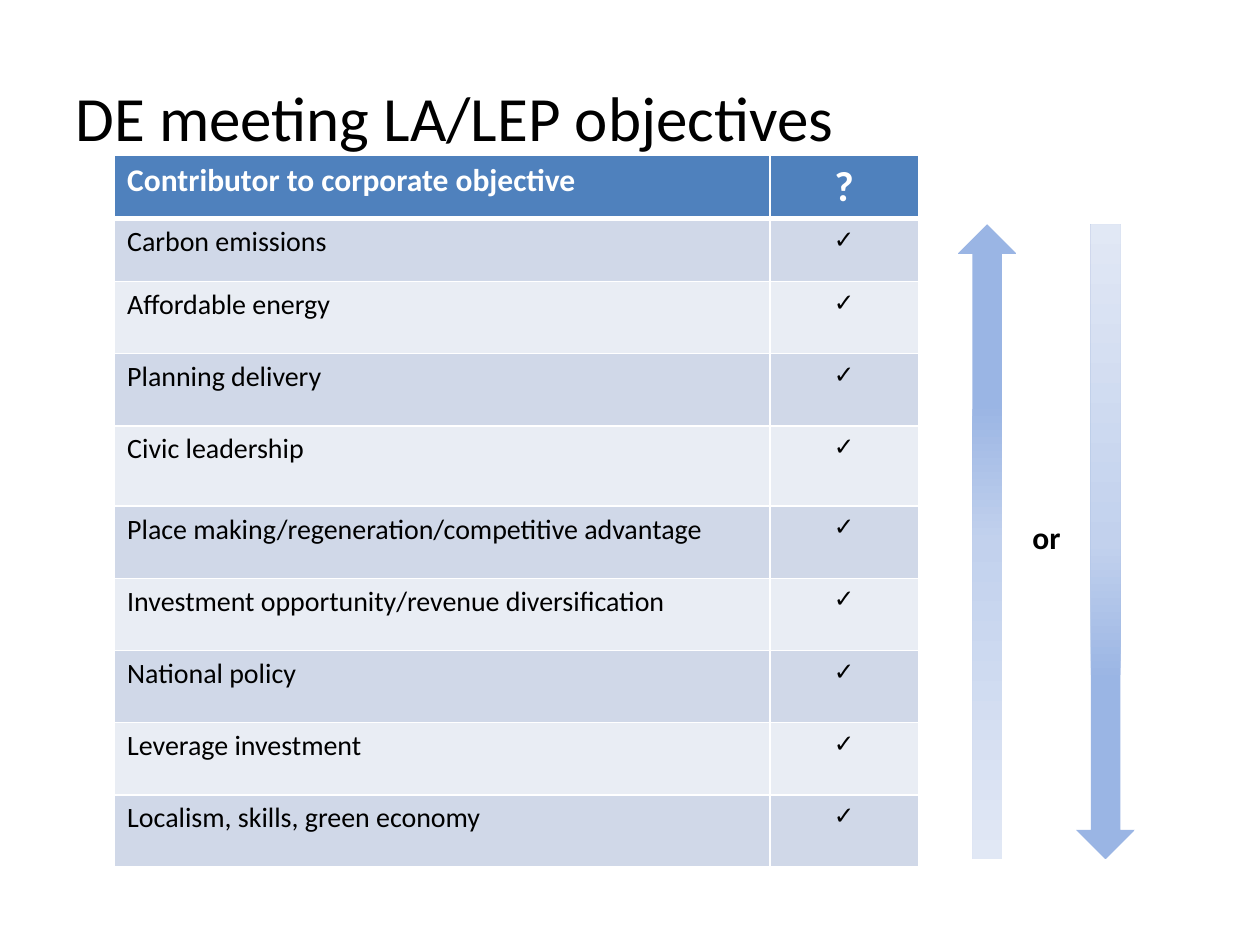
from lxml import etree
from pptx import Presentation
from pptx.dml.color import RGBColor
from pptx.enum.shapes import MSO_SHAPE
from pptx.enum.text import MSO_ANCHOR, PP_ALIGN
from pptx.oxml.ns import qn
from pptx.util import Pt

UP_ARROW = MSO_SHAPE.UP_ARROW
MIDDLE, TOP = MSO_ANCHOR.MIDDLE, MSO_ANCHOR.TOP
LEFT, CENTER = PP_ALIGN.LEFT, PP_ALIGN.CENTER

FONT = "Calibri"
COLORS = {
    "text": "000000",
    "white": "FFFFFF",
    "header": "4F81BD",
    "odd": "D0D8E8",
    "even": "E9EDF4",
}
ARROW_STOPS = [(28, "9AB5E4"), (50, "C2D1ED"), (100, "E1E8F5")]

TITLE = "DE meeting LA/LEP objectives"
HEADER = ("Contributor to corporate objective", "?")
OBJECTIVES = [
    "Carbon emissions",
    "Affordable energy",
    "Planning delivery",
    "Civic leadership",
    "Place making/regeneration/competitive advantage",
    "Investment opportunity/revenue diversification",
    "National policy",
    "Leverage investment",
    "Localism, skills, green economy",
]
TICK = "✓"

TABLE_LEFT, TABLE_TOP = 65.5, 88.8
COLUMN_WIDTHS = (374.4, 85)
ROW_HEIGHT = 41.3
SPECIAL_HEIGHTS = {0: 36, 1: 36, 4: 45.8}
ARROW_TOP, ARROW_WIDTH, ARROW_HEIGHT = 128.2, 33.8, 362.9
ARROWS = [(547.2, False), (614.9, True)]


def write(frame, text, size, color="text", bold=False, align=LEFT):
    frame.text = text
    para = frame.paragraphs[0]
    para.alignment = align
    font = para.runs[0].font
    font.name, font.size, font.bold = FONT, Pt(size), bold
    font.color.rgb = RGBColor.from_string(COLORS[color])


def add_text(page, area, text, size, anchor=TOP, **style):
    box = page.shapes.add_textbox(*map(Pt, area))
    box.text_frame.word_wrap = True
    box.text_frame.vertical_anchor = anchor
    write(box.text_frame, text, size, **style)


def add_color(parent, color):
    etree.SubElement(parent, qn("a:srgbClr"), val=color)


def set_borders(cell, bottom):
    properties = cell._tc.get_or_add_tcPr()
    for side, width in (("L", 1), ("R", 1), ("T", 1), ("B", bottom)):
        line = etree.SubElement(properties, qn(f"a:ln{side}"), w=str(Pt(width)))
        add_color(etree.SubElement(line, qn("a:solidFill")), COLORS["white"])


def add_objectives(page):
    rows = [HEADER] + [(name, TICK) for name in OBJECTIVES]
    heights = [SPECIAL_HEIGHTS.get(i, ROW_HEIGHT) for i in range(len(rows))]
    area = (TABLE_LEFT, TABLE_TOP, sum(COLUMN_WIDTHS), sum(heights))
    table = page.shapes.add_table(len(rows), 2, *map(Pt, area)).table
    for column, width in zip(table.columns, COLUMN_WIDTHS):
        column.width = Pt(width)
    for i, (values, height) in enumerate(zip(rows, heights)):
        table.rows[i].height = Pt(height)
        header = i == 0
        fill = "header" if header else "odd" if i % 2 else "even"
        sizes = (18, 24) if header else (16, 14)
        for j, (value, size, align) in enumerate(zip(values, sizes, (LEFT, CENTER))):
            cell = table.cell(i, j)
            color = "white" if header else "text"
            write(cell.text_frame, value, size, color, header, align)
            set_borders(cell, 3 if i == 0 else 1)
            cell.fill.solid()
            cell.fill.fore_color.rgb = RGBColor.from_string(COLORS[fill])


def add_arrow(page, left, flipped):
    area = (left, ARROW_TOP, ARROW_WIDTH, ARROW_HEIGHT)
    arrow = page.shapes.add_shape(UP_ARROW, *map(Pt, area))
    arrow.shadow.inherit = False
    arrow.line.fill.background()
    arrow.fill.gradient()
    gradient = arrow._element.spPr.find(qn("a:gradFill"))
    for child in list(gradient):
        gradient.remove(child)
    gradient.set("rotWithShape", "1")
    stops = etree.SubElement(gradient, qn("a:gsLst"))
    for position, color in ARROW_STOPS:
        stop = etree.SubElement(stops, qn("a:gs"), pos=str(position * 1000))
        add_color(stop, color)
    etree.SubElement(gradient, qn("a:lin"), ang="5400000", scaled="0")
    if flipped:
        arrow._element.spPr.find(qn("a:xfrm")).set("flipV", "1")


def main():
    deck = Presentation()
    deck.slide_width, deck.slide_height = Pt(720), Pt(540)
    page = deck.slides.add_slide(deck.slide_layouts[6])
    add_text(page, (36, 21.6, 648, 90), TITLE, 36, anchor=MIDDLE)
    add_objectives(page)
    for left, flipped in ARROWS:
        add_arrow(page, left, flipped)
    add_text(page, (575.3, 292.3, 45.4, 29), "or", 18, bold=True, align=CENTER)
    deck.save("out.pptx")


if __name__ == "__main__":
    main()
